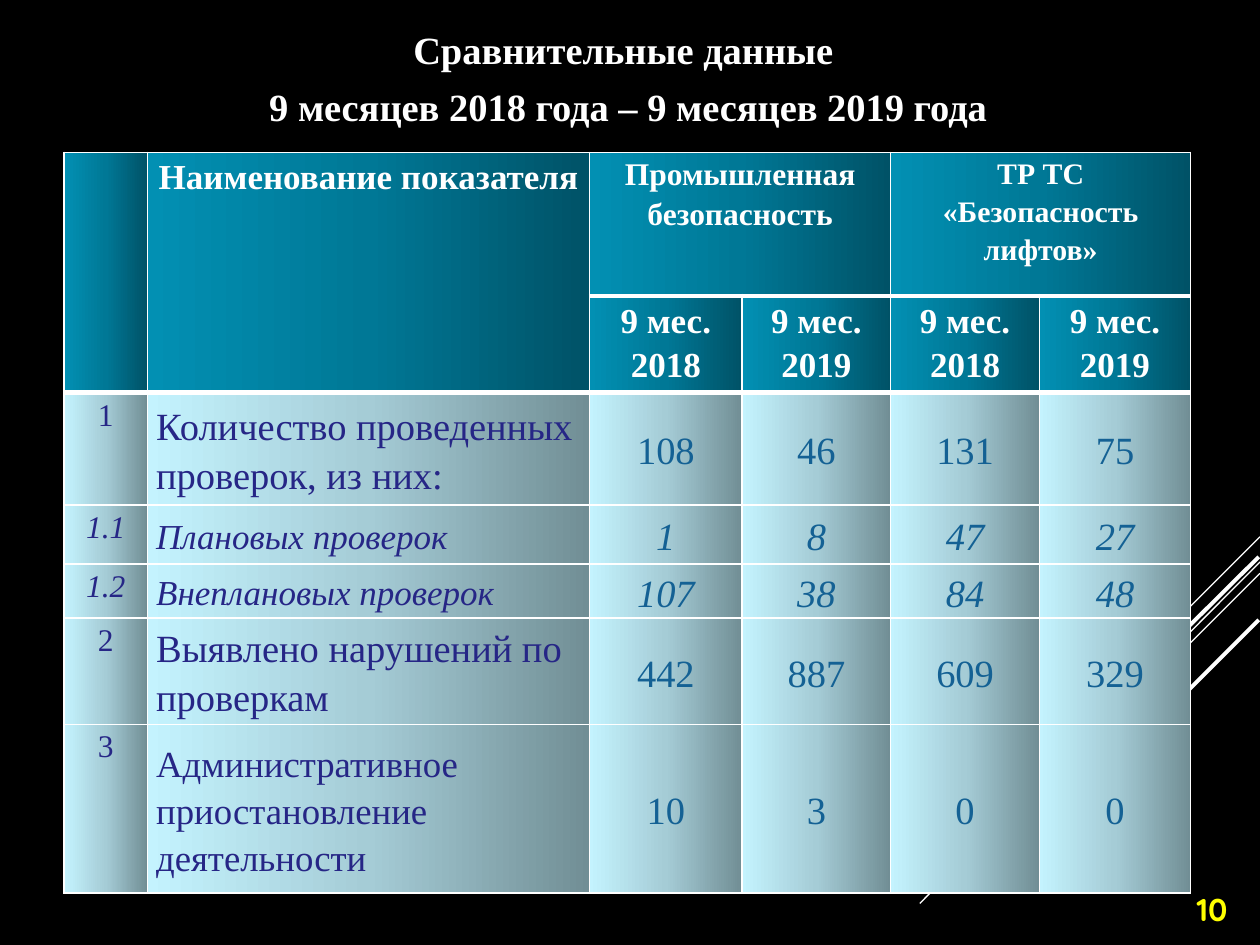
from dataclasses import dataclass

from lxml import etree
from pptx import Presentation
from pptx.dml.color import RGBColor
from pptx.enum.shapes import MSO_CONNECTOR as Connector, MSO_SHAPE as Shape
from pptx.enum.text import MSO_ANCHOR as Anchor, PP_ALIGN as Align
from pptx.oxml.ns import qn
from pptx.util import Inches, Pt

COLORS = {
    "background": "000000",
    "white": "FFFFFF",
    "label": "262686",
    "value": "146194",
    "page": "FFFF00",
}
HEADER_GRADIENT = ("005267", "007896", "0290B3")
BODY_GRADIENT = ("718E95", "A5CCD6", "C4F3FE")
SERIF = "Times New Roman"
THIN, THICK = 1, 3


@dataclass
class Style:
    size: float
    color: str
    bold: bool = False
    italic: bool = False
    font: str = SERIF


@dataclass
class Stripe:
    x1: float
    y1: float
    x2: float
    y2: float
    width: float


@dataclass
class Heading:
    row: int
    column: int
    last_row: int
    last_column: int
    text: str
    size: int


@dataclass
class Indicator:
    number: str
    name: str
    values: tuple[int, ...]
    name_size: int
    italic: bool = False


STRIPES = [
    Stripe(10, 4.26, 9.17, 5.09, 0.75),
    Stripe(10, 4.46, 7.3, 7.17, 0.75),
    Stripe(10, 4.55, 8.28, 6.27, 0.75),
    Stripe(9.99, 4.42, 8.41, 5.99, 2.25),
    Stripe(9.99, 4.92, 8.85, 6.06, 2.25),
]
TITLE = ["Сравнительные данные ", "9 месяцев 2018 года – 9 месяцев 2019 года"]
COLUMN_WIDTHS = [0.66, 3.51, 1.21, 1.18, 1.18, 1.2]
ROW_HEIGHTS = [1.14, 0.64, 0.89, 0.47, 0.43, 0.67, 1.34]
HEADER_ROWS = 2
HEADINGS = [
    Heading(0, 0, 1, 0, "", 20),
    Heading(0, 1, 1, 1, "Наименование показателя", 20),
    Heading(0, 2, 0, 3, "Промышленная безопасность", 18),
    Heading(0, 4, 0, 5, "ТР ТС «Безопасность лифтов»", 17),
] + [
    Heading(1, column, 1, column, f"9 мес. {2018 + column % 2}", 20)
    for column in range(2, 6)
]
INDICATORS = [
    Indicator("1", "Количество проведенных проверок, из них:", (108, 46, 131, 75), 22),
    Indicator("1.1", "Плановых проверок", (1, 8, 47, 27), 20, True),
    Indicator("1.2", "Внеплановых проверок", (107, 38, 84, 48), 20, True),
    Indicator("2", "Выявлено нарушений по проверкам", (442, 887, 609, 329), 22),
    Indicator("3", "Административное приостановление деятельности", (10, 3, 0, 0), 21),
]


def rgb(name: str) -> RGBColor:
    return RGBColor.from_string(COLORS[name])


def add_run(paragraph, text: str, style: Style) -> None:
    run = paragraph.add_run()
    run.text = text
    font = run.font
    font.name, font.size = style.font, Pt(style.size)
    font.bold, font.italic = style.bold, style.italic
    font.color.rgb = rgb(style.color)


def add_stripe(slide, stripe: Stripe) -> None:
    connector = slide.shapes.add_connector(
        Connector.STRAIGHT, Inches(stripe.x1), Inches(stripe.y1),
        Inches(stripe.x2), Inches(stripe.y2))
    connector.line.color.rgb = rgb("white")
    connector.line.width = Pt(stripe.width)
    etree.SubElement(connector._element.spPr, qn("a:effectLst"))


def add_color(parent, hex_color: str) -> None:
    etree.SubElement(parent, qn("a:srgbClr"), val=hex_color)


def paint_cell(cell, row: int) -> None:
    """Borders come first in the cell properties, then the gradient fill."""
    properties = cell._tc.get_or_add_tcPr()
    top = THICK if row in (1, HEADER_ROWS) else THIN
    bottom = THICK if row < HEADER_ROWS else THIN
    for side, width in (("L", THIN), ("R", THIN), ("T", top), ("B", bottom)):
        border = etree.SubElement(properties, qn(f"a:ln{side}"), w=str(Pt(width)))
        add_color(etree.SubElement(border, qn("a:solidFill")), COLORS["white"])
    gradient = etree.SubElement(properties, qn("a:gradFill"), rotWithShape="1")
    stops = etree.SubElement(gradient, qn("a:gsLst"))
    colors = HEADER_GRADIENT if row < HEADER_ROWS else BODY_GRADIENT
    for position, hex_color in zip((0, 50000, 100000), colors):
        add_color(etree.SubElement(stops, qn("a:gs"), pos=str(position)), hex_color)
    etree.SubElement(gradient, qn("a:lin"), ang="10800000", scaled="0")


def write_cell(cell, text: str, style: Style, align=Align.CENTER, anchor=Anchor.TOP) -> None:
    cell.vertical_anchor = anchor
    paragraph = cell.text_frame.paragraphs[0]
    paragraph.alignment = align
    paragraph.line_spacing = 1.15
    if text:
        add_run(paragraph, text, style)


def add_title(slide) -> None:
    box = slide.shapes.add_textbox(Inches(-0.03), Inches(0.15), Inches(10.03), Inches(0.93))
    frame = box.text_frame
    frame.word_wrap = True
    frame.vertical_anchor = Anchor.MIDDLE
    for index, text in enumerate(TITLE):
        paragraph = frame.add_paragraph() if index else frame.paragraphs[0]
        paragraph.alignment = Align.CENTER
        if index:
            paragraph.space_before = Pt(6)
        add_run(paragraph, text, Style(22, "white", bold=True))


def add_comparison_table(slide) -> None:
    table = slide.shapes.add_table(
        len(ROW_HEIGHTS), len(COLUMN_WIDTHS), Inches(0.51), Inches(1.21),
        Inches(sum(COLUMN_WIDTHS)), Inches(sum(ROW_HEIGHTS))).table
    table.horz_banding = False
    for column, width in zip(table.columns, COLUMN_WIDTHS):
        column.width = Inches(width)
    for row_index, height in enumerate(ROW_HEIGHTS):
        table.rows[row_index].height = Inches(height)
        for cell in table.rows[row_index].cells:
            cell.margin_left = cell.margin_right = Inches(0.07)
            cell.margin_top = cell.margin_bottom = Inches(0)
            paint_cell(cell, row_index)

    # Header
    for heading in HEADINGS:
        cell = table.cell(heading.row, heading.column)
        last = table.cell(heading.last_row, heading.last_column)
        if (heading.row, heading.column) != (heading.last_row, heading.last_column):
            cell.merge(last)
        write_cell(cell, heading.text, Style(heading.size, "white", bold=True))

    # Indicators
    for row, item in enumerate(INDICATORS, HEADER_ROWS):
        write_cell(table.cell(row, 0), item.number, Style(18, "label", italic=item.italic))
        write_cell(table.cell(row, 1), item.name,
                   Style(item.name_size, "label", italic=item.italic), Align.LEFT, Anchor.MIDDLE)
        for column, value in enumerate(item.values, 2):
            write_cell(table.cell(row, column), str(value),
                       Style(22, "value", italic=item.italic), anchor=Anchor.MIDDLE)


def add_page_number(slide) -> None:
    badge = slide.shapes.add_shape(
        Shape.OVAL, Inches(9.24), Inches(6.94), Inches(0.76), Inches(0.55))
    badge.shadow.inherit = False
    badge.fill.background()
    badge.line.fill.background()
    badge.text_frame.vertical_anchor = Anchor.MIDDLE
    paragraph = badge.text_frame.paragraphs[0]
    paragraph.alignment = Align.CENTER
    add_run(paragraph, "10", Style(18, "page", bold=True, font="Quicksand"))


def main() -> None:
    presentation = Presentation()
    presentation.slide_width, presentation.slide_height = Inches(10), Inches(7.5)
    slide = presentation.slides.add_slide(presentation.slide_layouts[6])
    slide.background.fill.solid()
    slide.background.fill.fore_color.rgb = rgb("background")
    for stripe in STRIPES:
        add_stripe(slide, stripe)
    add_title(slide)
    add_comparison_table(slide)
    add_page_number(slide)
    presentation.save("out.pptx")


if __name__ == "__main__":
    main()
